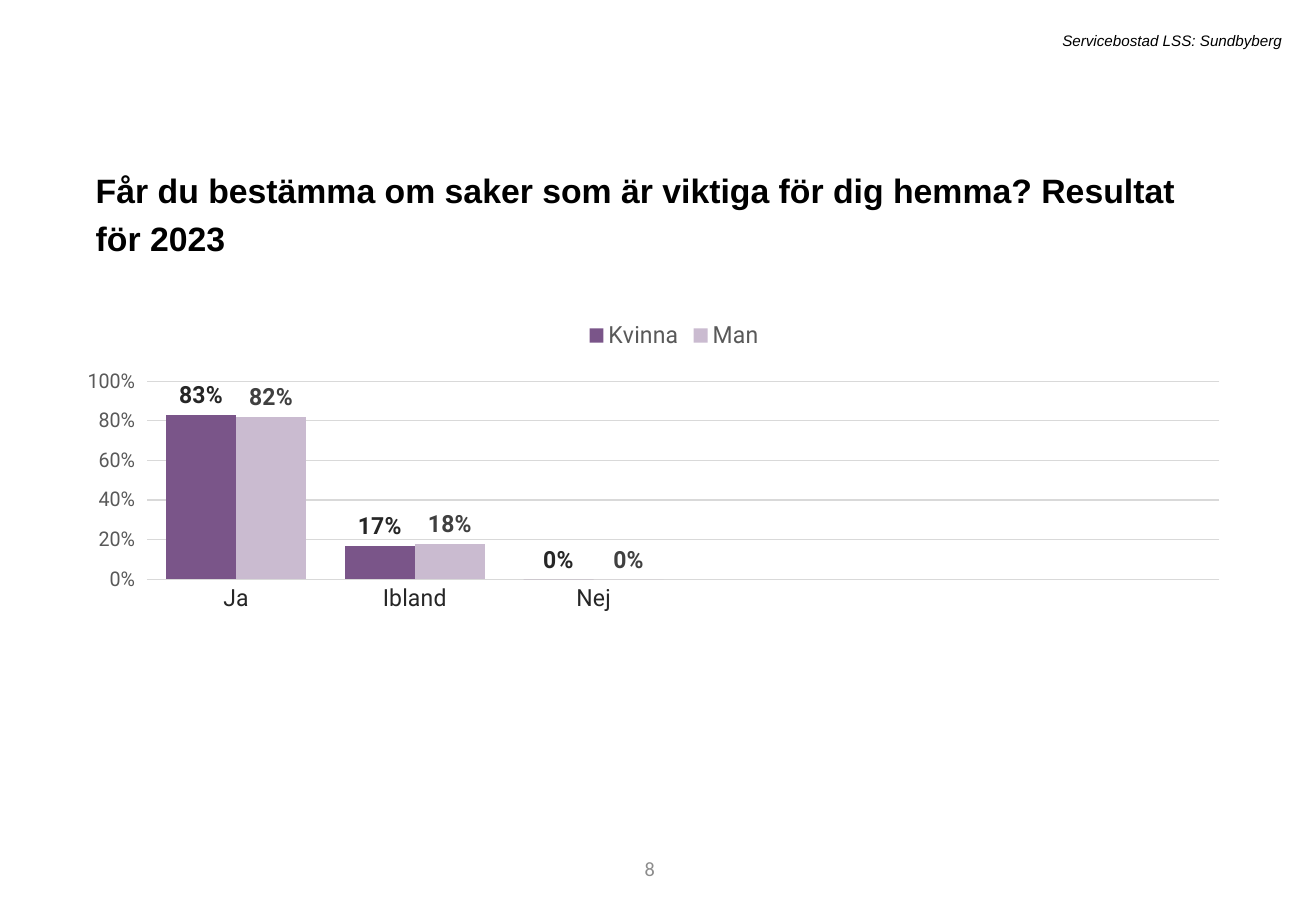
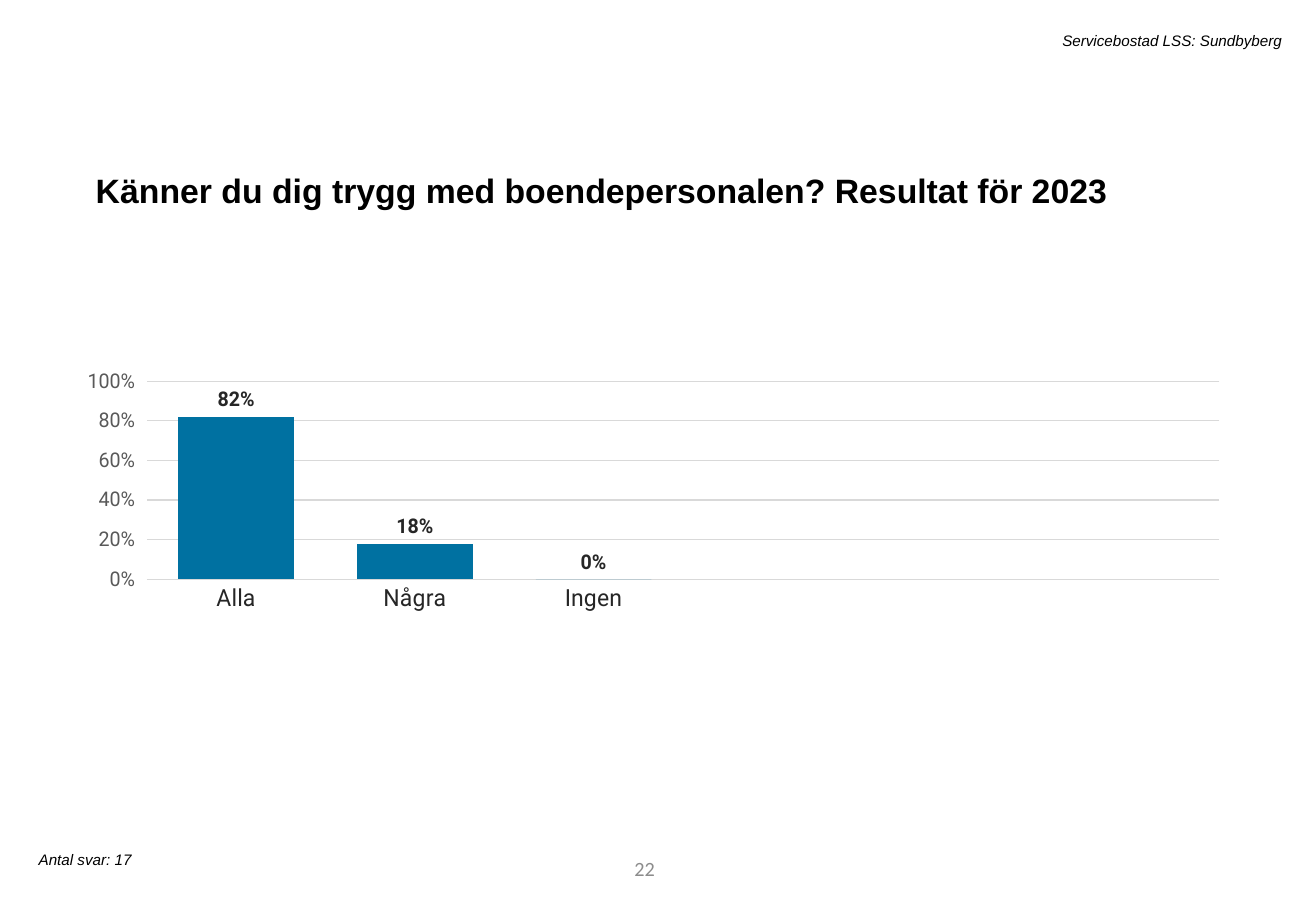
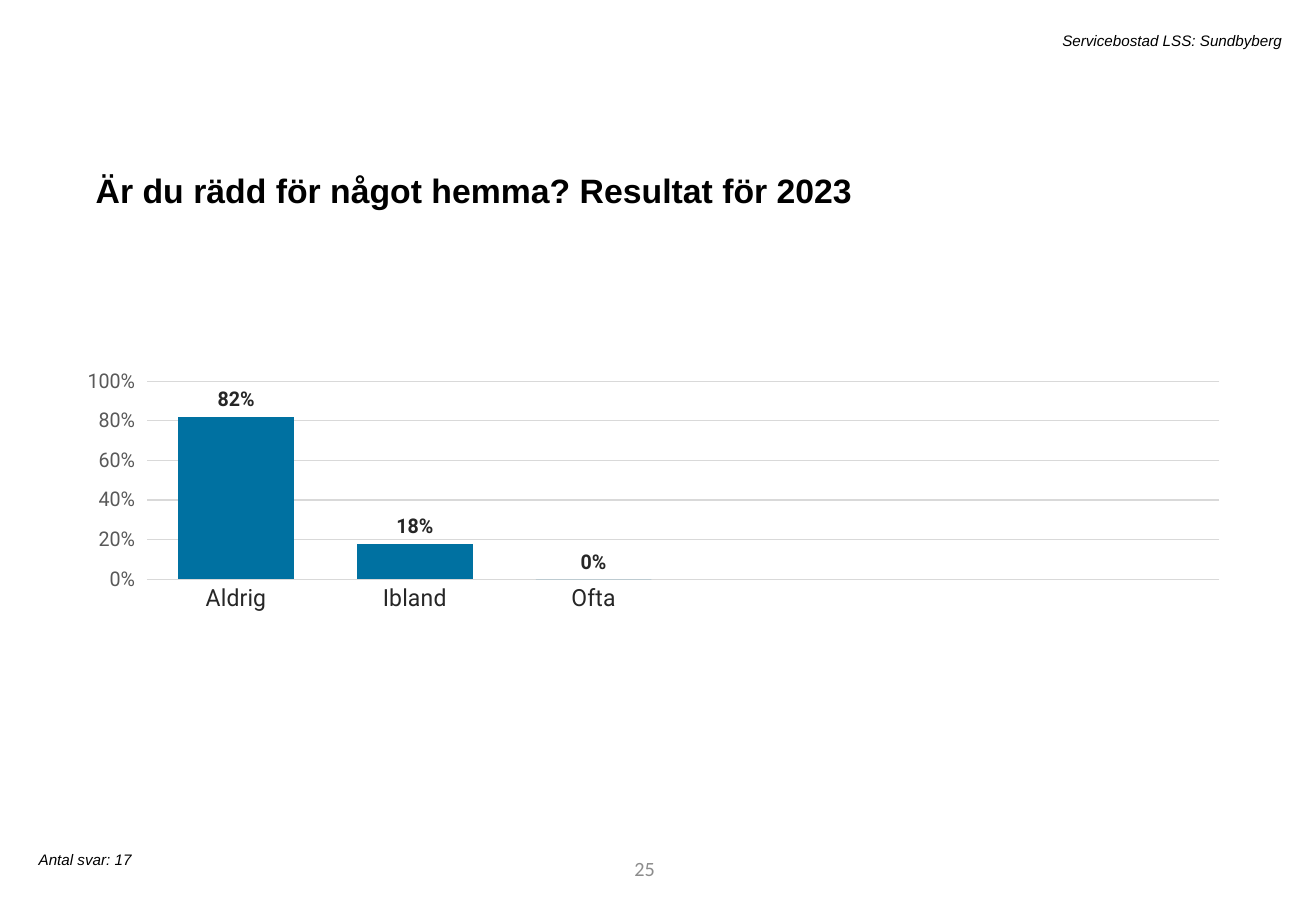
from pptx import Presentation
from pptx import util as u
from pptx.chart.data import CategoryChartData
from pptx.dml.color import RGBColor
from pptx.enum import chart as charts, text
from pptx.oxml import parse_xml
from pptx.oxml.ns import nsdecls

COLORS = {
    "black": "000000",
    "dark": "262626",
    "label": "404040",
    "grey": "595959",
    "number": "8C8C8C",
    "grid": "D9D9D9",
    "purple": "7A5589",
    "lilac": "CABBD0",
    "blue": "0071A1",
}
PLOT_LAYOUT = {"x": 0.025, "y": 0.154, "w": 0.966, "h": 0.413}
CATEGORY_SLOTS = 6

SLIDES = [
    {
        "number": 8,
        "title": "Får du bestämma om saker som är viktiga för dig hemma? Resultat för 2023",
        "categories": ["Ja", "Ibland", "Nej"],
        "series": [
            ("Kvinna", [0.83, 0.17, 0], "purple", "dark"),
            ("Man", [0.82, 0.18, 0], "lilac", "label"),
        ],
    },
    {
        "number": 22,
        "title": "Känner du dig trygg med boendepersonalen? Resultat för 2023",
        "categories": ["Alla", "Några", "Ingen"],
        "series": [("Series 1", [0.82, 0.18, 0], "blue", "dark")],
        "answers": "Antal svar: 17",
    },
    {
        "number": 25,
        "title": "Är du rädd för något hemma? Resultat för 2023",
        "categories": ["Aldrig", "Ibland", "Ofta"],
        "series": [("Series 1", [0.82, 0.18, 0], "blue", "dark")],
        "answers": "Antal svar: 17",
    },
]


def apply(target, values):
    for name, value in values.items():
        setattr(target, name, value)


def rgb(color):
    return RGBColor.from_string(COLORS[color])


class Deck:
    note_style = {"name": "Arial", "size": u.Pt(9), "italic": True}
    title_style = {"name": "Arial", "size": u.Pt(20), "bold": True}
    number_style = {"name": "Calibri", "size": u.Pt(12)}

    def __init__(self):
        self.presentation = Presentation()
        apply(self.presentation, {"slide_width": u.Pt(780), "slide_height": u.Pt(540)})
        self.slide = None

    def new_slide(self):
        self.slide = self.presentation.slides.add_slide(self.presentation.slide_layouts[6])

    def style_font(self, font, color, values):
        apply(font, values)
        font.color.rgb = rgb(color)

    def chart_font(self, font, size, color, bold=False):
        self.style_font(font, color, {"name": "Roboto", "size": u.Pt(size), "bold": bold})

    def add_text(self, words, box, style, color="black", frame=None, paragraph=None):
        shape = self.slide.shapes.add_textbox(*map(u.Pt, box))
        defaults = {"word_wrap": True, "auto_size": text.MSO_AUTO_SIZE.SHAPE_TO_FIT_TEXT}
        apply(shape.text_frame, {**defaults, **(frame or {})})
        first = shape.text_frame.paragraphs[0]
        apply(first, paragraph or {})
        run = first.add_run()
        run.text = words
        self.style_font(run.font, color, style)

    def add_title(self, words):
        self.add_text(words, (49.68, 92.16, 676.8, 33.84), self.title_style,
                      paragraph={"line_spacing": 1.2, "space_before": u.Pt(10)})

    def add_header(self, words):
        self.add_text(words, (128.88, 15.12, 637.92, 18), self.note_style,
                      paragraph={"alignment": text.PP_ALIGN.RIGHT})

    def add_answers(self, words):
        self.add_text(words, (15.84, 500.4, 204.48, 18), self.note_style,
                      frame={"word_wrap": False})

    def add_number(self, number):
        self.add_text(str(number), (219.6, 500.4, 175.68, 28.8), self.number_style, "number",
                      frame={"auto_size": text.MSO_AUTO_SIZE.NONE,
                             "vertical_anchor": text.MSO_ANCHOR.MIDDLE},
                      paragraph={"alignment": text.PP_ALIGN.RIGHT})

    def add_column_chart(self, categories, series_rows):
        data = CategoryChartData(number_format="0%")
        spare = CATEGORY_SLOTS - len(categories)
        data.categories = categories + [""] * spare
        for name, values, _, _ in series_rows:
            data.add_series(name, values + [None] * spare)
        box = map(u.Pt, (51.84, 182.16, 676.8, 284.4))
        chart = self.slide.shapes.add_chart(
            charts.XL_CHART_TYPE.COLUMN_CLUSTERED, *box, data).chart
        apply(chart, {"has_title": False, "has_legend": len(series_rows) > 1})
        self.chart_font(chart.font, 10, "black")
        if chart.has_legend:
            apply(chart.legend, {"position": charts.XL_LEGEND_POSITION.TOP,
                                 "include_in_layout": False})
            self.chart_font(chart.legend.font, 14, "grey")
        self.format_axes(chart)
        self.format_series(chart, series_rows)
        self.set_plot_layout(chart)

    def format_axes(self, chart):
        category, value = chart.category_axis, chart.value_axis
        apply(category, {"major_tick_mark": charts.XL_TICK_MARK.NONE,
                         "has_major_gridlines": False})
        apply(value, {"minimum_scale": 0, "maximum_scale": 1, "major_unit": 0.2,
                      "has_major_gridlines": True,
                      "major_tick_mark": charts.XL_TICK_MARK.OUTSIDE})
        apply(value.tick_labels, {"number_format": "0%", "number_format_is_linked": False})
        self.chart_font(category.tick_labels.font, 14, "dark")
        self.chart_font(value.tick_labels.font, 12, "grey")
        for line in (category.format.line, value.major_gridlines.format.line):
            line.color.rgb = rgb("grid")
            line.width = u.Pt(0.75)
        value.format.line.fill.background()

    def format_series(self, chart, series_rows):
        plot = chart.plots[0]
        apply(plot, {"gap_width": 55, "overlap": 0, "vary_by_categories": False})
        label_size = 14 if len(series_rows) > 1 else 12
        for series, (_, _, color, label_color) in zip(plot.series, series_rows):
            series.format.fill.solid()
            series.format.fill.fore_color.rgb = rgb(color)
            labels = series.data_labels
            apply(labels, {"show_value": True, "number_format": "0%",
                           "number_format_is_linked": False,
                           "position": charts.XL_LABEL_POSITION.OUTSIDE_END})
            self.chart_font(labels.font, label_size, label_color, bold=True)

    def set_plot_layout(self, chart):
        area = chart.element.xpath("c:chart/c:plotArea")[0]
        for layout in area.xpath("c:layout"):
            area.remove(layout)
        modes = "".join(f'<c:{side}Mode val="edge"/>' for side in "xy")
        sizes = "".join(f'<c:{side} val="{size}"/>' for side, size in PLOT_LAYOUT.items())
        area.insert(0, parse_xml(
            f'<c:layout {nsdecls("c")}><c:manualLayout><c:layoutTarget val="inner"/>'
            f"{modes}{sizes}</c:manualLayout></c:layout>"))


def main():
    deck = Deck()
    for content in SLIDES:
        deck.new_slide()
        deck.add_number(content["number"])
        deck.add_title(content["title"])
        deck.add_column_chart(content["categories"], content["series"])
        if "answers" in content:
            deck.add_answers(content["answers"])
        deck.add_header("Servicebostad LSS: Sundbyberg")
    deck.presentation.save("out.pptx")


if __name__ == "__main__":
    main()
